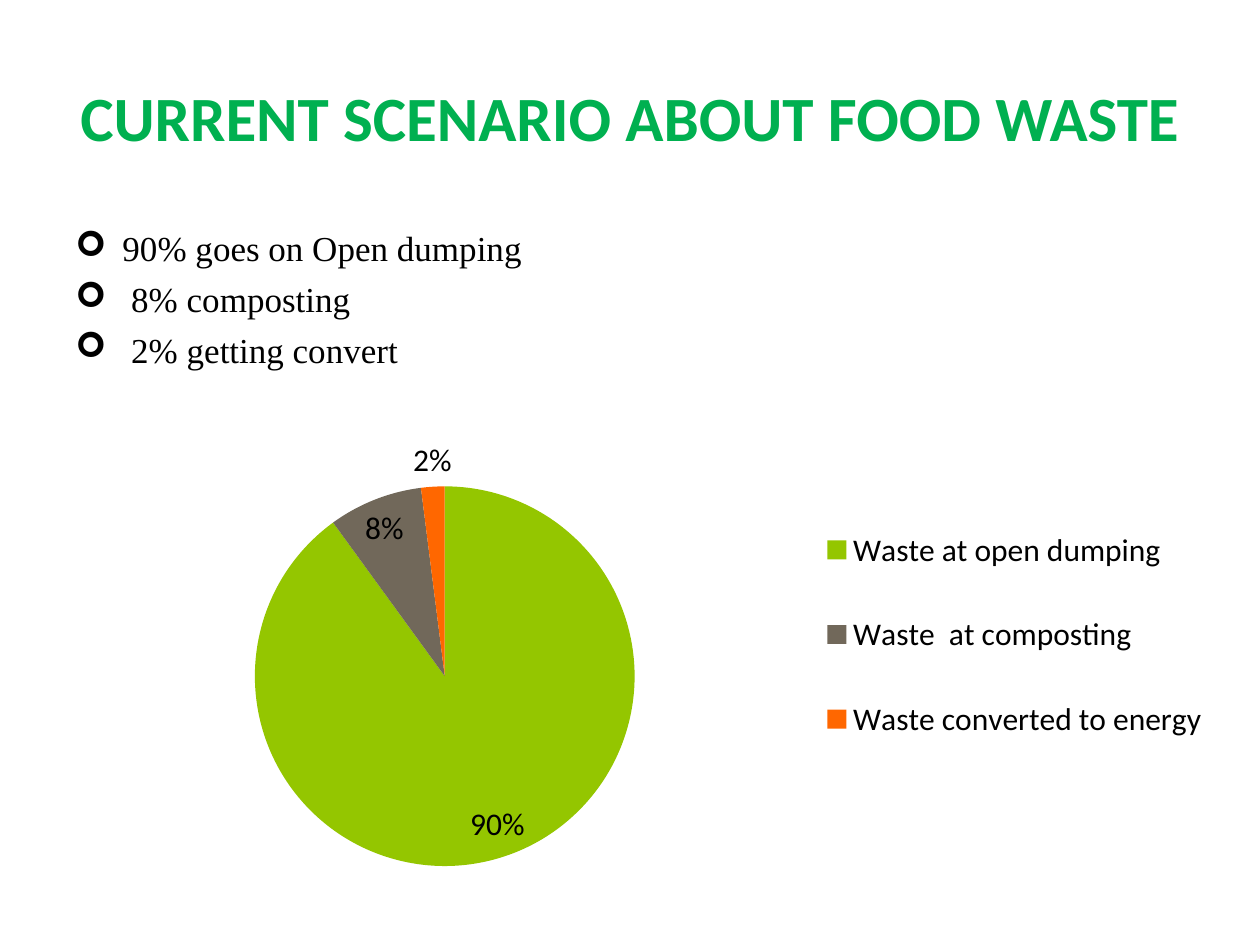
from dataclasses import dataclass

from lxml import etree
from pptx import Presentation
from pptx import util as u
from pptx.chart.data import CategoryChartData
from pptx.dml.color import RGBColor
from pptx.enum import chart as ch, text as tx
from pptx.oxml import parse_xml
from pptx.oxml.ns import nsdecls, qn

GREEN = RGBColor(0x00, 0xB0, 0x50)
BLACK = RGBColor(0, 0, 0)
LIME = RGBColor(0x94, 0xC6, 0x00)
BROWN = RGBColor(0x71, 0x68, 0x5A)
ORANGE = RGBColor(0xFF, 0x67, 0x00)


@dataclass
class Share:
    point: str
    label: str
    value: float
    color: RGBColor


SHARES = [
    Share("90% goes on Open dumping", "Waste at open dumping", 0.9, LIME),
    Share(" 8% composting", "Waste  at composting", 0.08, BROWN),
    Share(" 2% getting convert", "Waste converted to energy", 0.02, ORANGE),
]


def set_font(font, name: str, size: int, color: RGBColor, bold: bool = False) -> None:
    font.name, font.size, font.bold = name, u.Pt(size), bold
    font.color.rgb = color


def draw_title(slide, words: str) -> None:
    title = slide.shapes.title
    title.left, title.top = u.Cm(1.27), u.Cm(0.76)
    title.width, title.height = u.Cm(22.86), u.Cm(3.18)
    frame = title.text_frame
    frame.text = words
    frame.vertical_anchor = tx.MSO_ANCHOR.MIDDLE
    par = frame.paragraphs[0]
    par.alignment = tx.PP_ALIGN.CENTER
    set_font(par.runs[0].font, "Calibri", 36, GREEN, True)


def draw_points(slide, shares: list[Share]) -> None:
    box = slide.shapes.add_textbox(u.Cm(1.27), u.Cm(4.45), u.Cm(9.58), u.Cm(5.6))
    frame = box.text_frame
    frame.word_wrap = False
    frame.text = "\n".join(share.point for share in shares)
    for i, par in enumerate(frame.paragraphs):
        props = par._p.get_or_add_pPr()
        props.set("marL", str(u.Cm(0.95)))
        props.set("indent", str(-u.Cm(0.95)))
        etree.SubElement(props, qn("a:buFont")).set("typeface", "Wingdings")
        etree.SubElement(props, qn("a:buChar")).set("char", "➢")
        par.alignment = tx.PP_ALIGN.LEFT
        par.space_before = u.Pt(5 if i else 0)
        set_font(par.runs[0].font, "Times New Roman", 20, BLACK)


def place(part, x: float, y: float, w: float, h: float, inner: bool = False) -> None:
    """Fix a chart part at fractions of the chart's size."""
    target = '<c:layoutTarget val="inner"/>' if inner else ""
    layout = parse_xml(
        f'<c:layout {nsdecls("c")}><c:manualLayout>{target}'
        '<c:xMode val="edge"/><c:yMode val="edge"/>'
        f'<c:x val="{x}"/><c:y val="{y}"/><c:w val="{w}"/><c:h val="{h}"/>'
        "</c:manualLayout></c:layout>"
    )
    for old in part.findall(qn("c:layout")):
        part.remove(old)
    pos = part.find(qn("c:legendPos"))
    if pos is None:
        part.insert(0, layout)
    else:
        pos.addnext(layout)


def draw_pie(slide, shares: list[Share]) -> None:
    data = CategoryChartData(number_format="0%")
    data.categories = [share.label for share in shares]
    data.add_series("Series 1", [share.value for share in shares])
    chart = slide.shapes.add_chart(
        ch.XL_CHART_TYPE.PIE, u.Cm(1.07), u.Cm(8.46), u.Cm(23.93), u.Cm(9.32), data
    ).chart
    set_font(chart.font, "Calibri", 18, BLACK)
    chart.has_title = False
    chart.has_legend = True
    chart.legend.position = ch.XL_LEGEND_POSITION.RIGHT
    chart.legend.include_in_layout = False
    place(chart.legend._element, 0.63, 0.14, 0.36, 0.65)
    place(chart._chartSpace.chart.plotArea, 0.17, 0.14, 0.32, 0.83, True)

    plot = chart.plots[0]
    plot.vary_by_categories = True
    plot.has_data_labels = True
    labels = plot.data_labels
    labels.show_value, labels.show_percentage = True, False
    labels.number_format, labels.number_format_is_linked = "0%", False
    labels.position = ch.XL_LABEL_POSITION.BEST_FIT
    set_font(labels.font, "Calibri", 18, BLACK)
    for i, share in enumerate(shares):
        fill = plot.series[0].points[i].format.fill
        fill.solid()
        fill.fore_color.rgb = share.color


def main() -> None:
    deck = Presentation()
    deck.slide_width, deck.slide_height = u.Cm(25.4), u.Cm(19.05)
    slide = deck.slides.add_slide(deck.slide_layouts[5])
    draw_title(slide, "CURRENT SCENARIO ABOUT FOOD WASTE")
    draw_points(slide, SHARES)
    draw_pie(slide, SHARES)
    deck.save("out.pptx")


if __name__ == "__main__":
    main()
